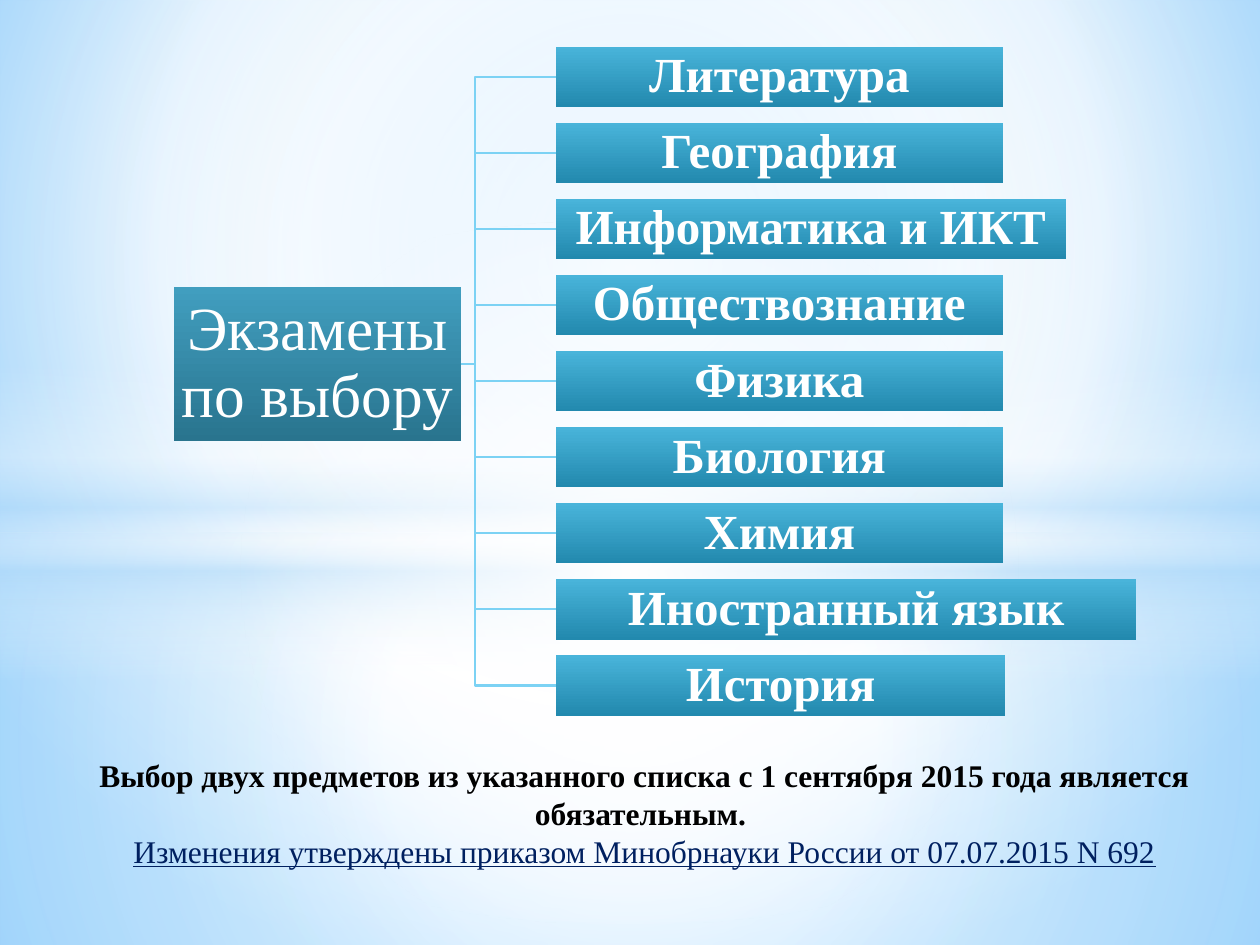
from lxml.etree import SubElement
from pptx import Presentation
from pptx.dml.color import RGBColor
from pptx.enum.shapes import MSO_SHAPE
from pptx.enum.text import MSO_ANCHOR, PP_ALIGN
from pptx.oxml.ns import qn
from pptx.util import Inches, Pt

WHITE = RGBColor(0xFF, 0xFF, 0xFF)
BLACK = RGBColor(0x00, 0x00, 0x00)
NAVY = RGBColor(0x00, 0x20, 0x60)
SKY = RGBColor(0x9E, 0xD5, 0xFF)
AZURE = RGBColor(0x5B, 0xB9, 0xFF)
PALE = RGBColor(0xB4, 0xDC, 0xFA)
LINE = RGBColor(0x7C, 0xD2, 0xF4)
ROOT_COLORS = [(0, RGBColor(0x41, 0x9E, 0xBF), 100), (100, RGBColor(0x29, 0x74, 0x8E), 100)]
SUBJECT_COLORS = [(0, RGBColor(0x49, 0xB4, 0xDA), 100), (100, RGBColor(0x22, 0x89, 0xAE), 100)]
CENTER = (50, 50, 50, 50)

SUBJECTS = [
    ("Литература", 3.55),
    ("География", 3.55),
    ("Информатика и ИКТ", 4.05),
    ("Обществознание", 3.55),
    ("Физика", 3.55),
    ("Биология", 3.55),
    ("Химия", 3.55),
    ("Иностранный язык", 4.61),
    ("История", 3.57),
]
SUBJECT_LEFT, SUBJECT_TOP, SUBJECT_HEIGHT = 4.41, 0.37, 0.48
PITCH = 4.83 / 8
ROOT_BOX = (1.38, 2.28, 2.28, 1.22)
HUB_X, TRUNK_X, HUB_Y = 3.13, 3.77, 2.89


class Deck:
    font = "Times New Roman"

    def __init__(self):
        self.prs = Presentation()
        self.prs.slide_width, self.prs.slide_height = Inches(10), Inches(7.5)
        self.s = self.prs.slides.add_slide(self.prs.slide_layouts[6])

    def gradient(self, fill, element, stops, focus=None):
        fill.gradient()
        grad = next(element.iter(qn("a:gradFill")))
        for child in list(grad):
            grad.remove(child)
        grad.set("rotWithShape", "1")
        gs_list = SubElement(grad, qn("a:gsLst"))
        for position, color, opacity in stops:
            gs = SubElement(gs_list, qn("a:gs"), pos=str(position * 1000))
            clr = SubElement(gs, qn("a:srgbClr"), val=str(color))
            if opacity < 100:
                SubElement(clr, qn("a:alpha"), val=str(opacity * 1000))
        if focus:
            circle = SubElement(grad, qn("a:path"), path="circle")
            sides = {k: str(v * 1000) for k, v in zip("ltrb", focus)}
            SubElement(circle, qn("a:fillToRect"), **sides)
        else:
            SubElement(grad, qn("a:lin"), ang="5400000", scaled="0")

    def background(self, stops, focus):
        self.gradient(self.s.background.fill, self.s.element, stops, focus)

    def shape(self, box, stops, focus=None, kind=MSO_SHAPE.RECTANGLE):
        sp = self.s.shapes.add_shape(kind, *map(Inches, box))
        sp.shadow.inherit = False
        sp.line.fill.background()
        self.gradient(sp.fill, sp.element, stops, focus)
        return sp

    def style(self, p, size, color, bold=False, underline=False):
        p.alignment = PP_ALIGN.CENTER
        p.font.name, p.font.size = self.font, Pt(size)
        p.font.bold, p.font.underline = bold, underline
        p.font.color.rgb = color

    def node(self, box, text, stops, size, bold=False):
        tf = self.shape(box, stops).text_frame
        tf.word_wrap = True
        tf.vertical_anchor = MSO_ANCHOR.MIDDLE
        tf.margin_left = tf.margin_right = Inches(0.02)
        tf.margin_top = tf.margin_bottom = Inches(0.02)
        p = tf.paragraphs[0]
        p.text = text
        p.line_spacing = 0.9
        self.style(p, size, WHITE, bold)

    def branch(self, points):
        (x, y), *rest = [(Inches(a), Inches(b)) for a, b in points]
        builder = self.s.shapes.build_freeform(x, y)
        builder.add_line_segments(rest, close=False)
        sp = builder.convert_to_shape()
        sp.shadow.inherit = False
        sp.fill.background()
        sp.line.color.rgb = LINE
        sp.line.width = Pt(1.25)

    def note(self, box, lines):
        tf = self.s.shapes.add_textbox(*map(Inches, box)).text_frame
        tf.word_wrap = True
        for i, (text, color, bold, underline) in enumerate(lines):
            p = tf.add_paragraph() if i else tf.paragraphs[0]
            p.text = text
            self.style(p, 18, color, bold, underline)


def main():
    deck = Deck()
    deck.background([(0, SKY, 100), (60, WHITE, 100), (100, AZURE, 100)], (20, 10, 20, 60))
    deck.shape((0, 4.23, 10, 3.27), [(0, WHITE, 91), (37, WHITE, 76), (100, PALE, 79)], CENTER)
    deck.shape((0, 0, 10, 4.23), [(0, WHITE, 89), (48, WHITE, 62), (100, PALE, 79)], CENTER)
    deck.shape((0, 2.9, 10, 2.5), [(0, WHITE, 0), (29, WHITE, 30), (45, PALE, 40),
                                   (55, WHITE, 26), (65, PALE, 60), (100, WHITE, 0)])
    deck.shape((0, 1.75, 10, 5.58), [(0, WHITE, 100), (54, WHITE, 0)], CENTER, MSO_SHAPE.OVAL)

    tops = [SUBJECT_TOP + i * PITCH for i in range(len(SUBJECTS))]
    for top in reversed(tops):
        y = top + SUBJECT_HEIGHT / 2
        deck.branch([(HUB_X, HUB_Y), (TRUNK_X, HUB_Y), (TRUNK_X, y), (SUBJECT_LEFT, y)])
    deck.node(ROOT_BOX, "Экзамены по выбору", ROOT_COLORS, 35)
    for top, (name, width) in zip(tops, SUBJECTS):
        deck.node((SUBJECT_LEFT, top, width, SUBJECT_HEIGHT), name, SUBJECT_COLORS, 28, True)

    deck.note((0.51, 5.95, 9.21, 1.01), [
        ("Выбор двух предметов из указанного списка с 1 сентября 2015 года является обязательным. ",
         BLACK, True, False),
        ("Изменения утверждены приказом Минобрнауки России от 07.07.2015 N 692", NAVY, False, True),
    ])
    deck.prs.save("out.pptx")


if __name__ == "__main__":
    main()
